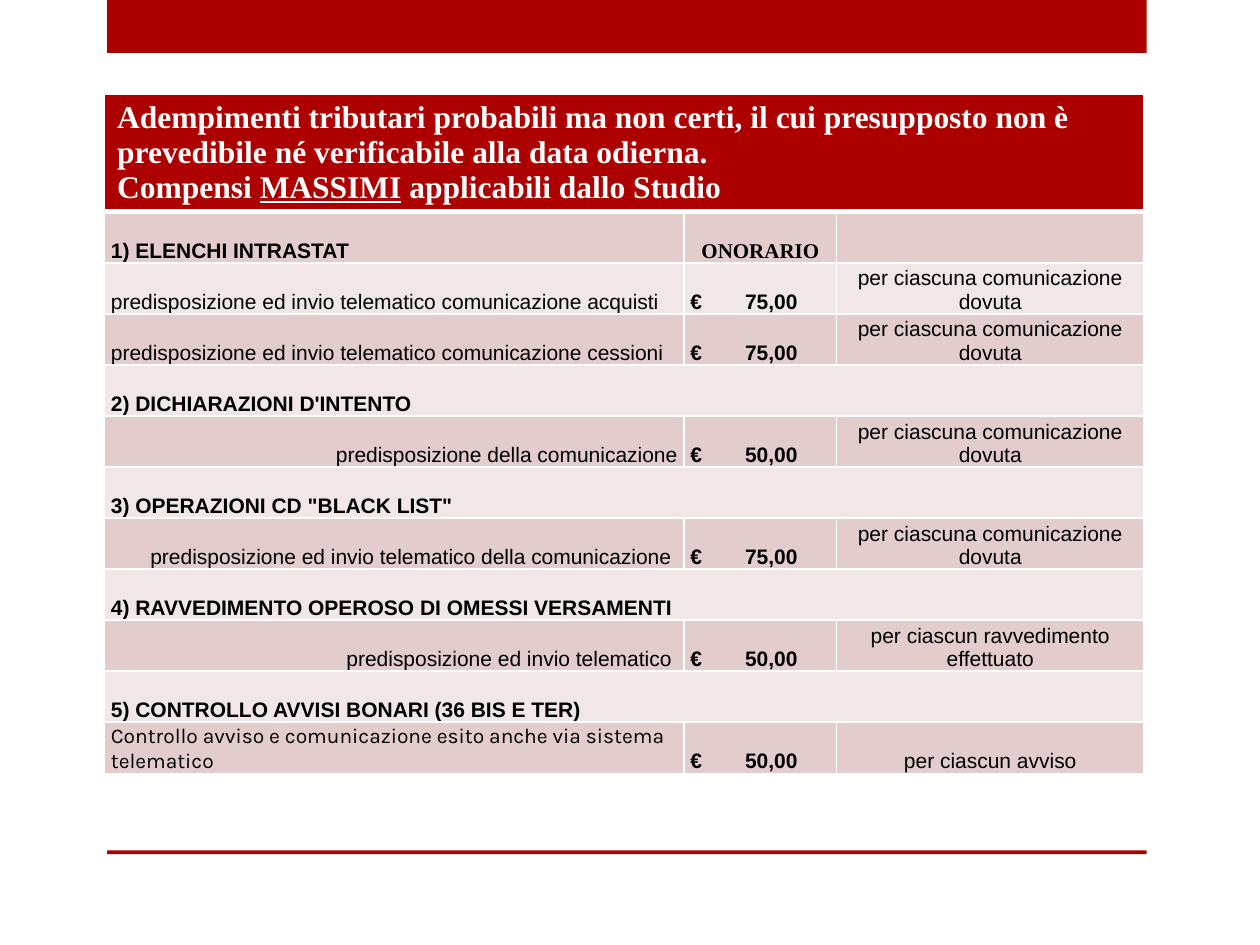
from dataclasses import dataclass

from lxml import etree
from pptx import Presentation
from pptx.dml.color import RGBColor
from pptx.enum.shapes import MSO_SHAPE
from pptx.enum.text import MSO_ANCHOR, PP_ALIGN
from pptx.oxml.ns import qn
from pptx.util import Inches, Pt

RECT = MSO_SHAPE.RECTANGLE
BOTTOM = MSO_ANCHOR.BOTTOM
LEFT, CENTER, RIGHT = PP_ALIGN.LEFT, PP_ALIGN.CENTER, PP_ALIGN.RIGHT

RED = RGBColor(0xAD, 0x01, 0x01)
DARK_BAND = RGBColor(0xE3, 0xCC, 0xCC)
LIGHT_BAND = RGBColor(0xF1, 0xE7, 0xE7)
WHITE = RGBColor(0xFF, 0xFF, 0xFF)
BLACK = RGBColor(0, 0, 0)
SANS, SERIF, KARLA = "Arial", "Times New Roman", "Karla"

COL_WIDTHS = (4.6, 1.21, 2.44)
HEADER_H = Inches(0.92)
BODY_H = Inches(4.46)
EACH_NOTICE = "per ciascuna comunicazione dovuta"


@dataclass
class Fee:
    service: str
    amount: str
    basis: str
    align: PP_ALIGN = RIGHT
    font: str = SANS


@dataclass
class Section:
    title: str
    full_width: bool = True


ROWS = (
    Section("1) ELENCHI INTRASTAT", full_width=False),
    Fee("predisposizione ed invio telematico comunicazione acquisti", "75,00", EACH_NOTICE, LEFT),
    Fee("predisposizione ed invio telematico comunicazione cessioni", "75,00", EACH_NOTICE, LEFT),
    Section("2) DICHIARAZIONI D'INTENTO"),
    Fee("predisposizione della comunicazione", "50,00", EACH_NOTICE),
    Section('3) OPERAZIONI CD "BLACK LIST"'),
    Fee("predisposizione ed invio telematico della comunicazione ", "75,00", EACH_NOTICE),
    Section("4) RAVVEDIMENTO OPEROSO DI OMESSI VERSAMENTI"),
    Fee("predisposizione ed invio telematico ", "50,00", "per ciascun ravvedimento effettuato"),
    Section("5) CONTROLLO AVVISI BONARI (36 BIS E TER)"),
    Fee("Controllo avviso e comunicazione esito anche via sistema telematico", "50,00",
        "per ciascun avviso", LEFT, KARLA),
)


def add_bar(s, top: float, height: float) -> None:
    sp = s.shapes.add_shape(RECT, Inches(0.85), Inches(top), Inches(8.25), Inches(height))
    sp.shadow.inherit = False
    sp.fill.solid()
    sp.fill.fore_color.rgb = RED
    sp.line.fill.background()


def style_run(r, size: float, font: str, color: RGBColor, bold: bool) -> None:
    r.font.size, r.font.name, r.font.bold = Pt(size), font, bold
    r.font.color.rgb = color


def style_cell(cell, fill: RGBColor, bottom: float = 1) -> None:
    """Fill the cell and give it white borders; widths are in points."""
    cell.fill.solid()
    cell.fill.fore_color.rgb = fill
    tc_pr = cell._tc.get_or_add_tcPr()
    for i, (side, width) in enumerate((("L", 1), ("R", 1), ("T", 1), ("B", bottom))):
        ln = etree.Element(qn(f"a:ln{side}"), w=str(Pt(width)))
        solid = etree.SubElement(ln, qn("a:solidFill"))
        etree.SubElement(solid, qn("a:srgbClr"), val=str(WHITE))
        tc_pr.insert(i, ln)


def add_right_tab(p, position: float) -> None:
    tabs = etree.SubElement(p._p.get_or_add_pPr(), qn("a:tabLst"))
    etree.SubElement(tabs, qn("a:tab"), pos=str(Inches(position)), algn="r")


def write_cell(cell, text: str, align: PP_ALIGN = LEFT, font: str = SANS, bold: bool = False):
    p = cell.text_frame.paragraphs[0]
    p.text = text
    p.alignment = align
    for r in p.runs:
        style_run(r, 12, font, BLACK, bold)
    return p


def write_header(cell) -> None:
    tf = cell.text_frame
    tf.text = ("Adempimenti tributari probabili ma non certi, il cui presupposto "
               "non è prevedibile né verificabile alla data odierna.")
    p = tf.add_paragraph()
    for text in ("Compensi ", "MASSIMI", " applicabili dallo Studio"):
        r = p.add_run()
        r.text = text
        r.font.underline = text == "MASSIMI"
    for p in tf.paragraphs:
        for r in p.runs:
            style_run(r, 18, SERIF, WHITE, True)


def write_row(cells, row) -> None:
    if isinstance(row, Fee):
        write_cell(cells[0], row.service, row.align, row.font)
        add_right_tab(write_cell(cells[1], f"€\t{row.amount}", bold=True), 0.85)
        write_cell(cells[2], row.basis, CENTER)
        return
    if row.full_width:
        cells[0].merge(cells[2])
    else:
        write_cell(cells[1], "ONORARIO", CENTER, SERIF, True)
    write_cell(cells[0], row.title, bold=True)


def add_fee_table(s) -> None:
    frame = s.shapes.add_table(len(ROWS) + 1, len(COL_WIDTHS), Inches(0.83), Inches(0.75),
                               Inches(sum(COL_WIDTHS)), HEADER_H + BODY_H)
    table = frame.table
    for column, width in zip(table.columns, COL_WIDTHS):
        column.width = Inches(width)

    # Heading across all columns
    table.rows[0].height = HEADER_H
    heading = table.rows[0].cells
    for cell in heading:
        style_cell(cell, RED, bottom=3)
    heading[0].merge(heading[2])
    write_header(heading[0])

    # Banded sections and fees
    for i, row in enumerate(ROWS, start=1):
        table.rows[i].height = BODY_H // len(ROWS)
        cells = table.rows[i].cells
        for cell in cells:
            style_cell(cell, DARK_BAND if i % 2 else LIGHT_BAND)
            cell.vertical_anchor = BOTTOM
            cell.margin_left = cell.margin_right = Inches(0.05)
            cell.margin_top = cell.margin_bottom = 0
        write_row(cells, row)


def main() -> None:
    prs = Presentation()
    prs.slide_width, prs.slide_height = Inches(10), Inches(7.5)
    s = prs.slides.add_slide(prs.slide_layouts[6])
    # Bars at the top and bottom of the page
    add_bar(s, 0, 0.42)
    add_bar(s, 6.75, 0.03)
    add_fee_table(s)
    prs.save("out.pptx")


if __name__ == "__main__":
    main()
